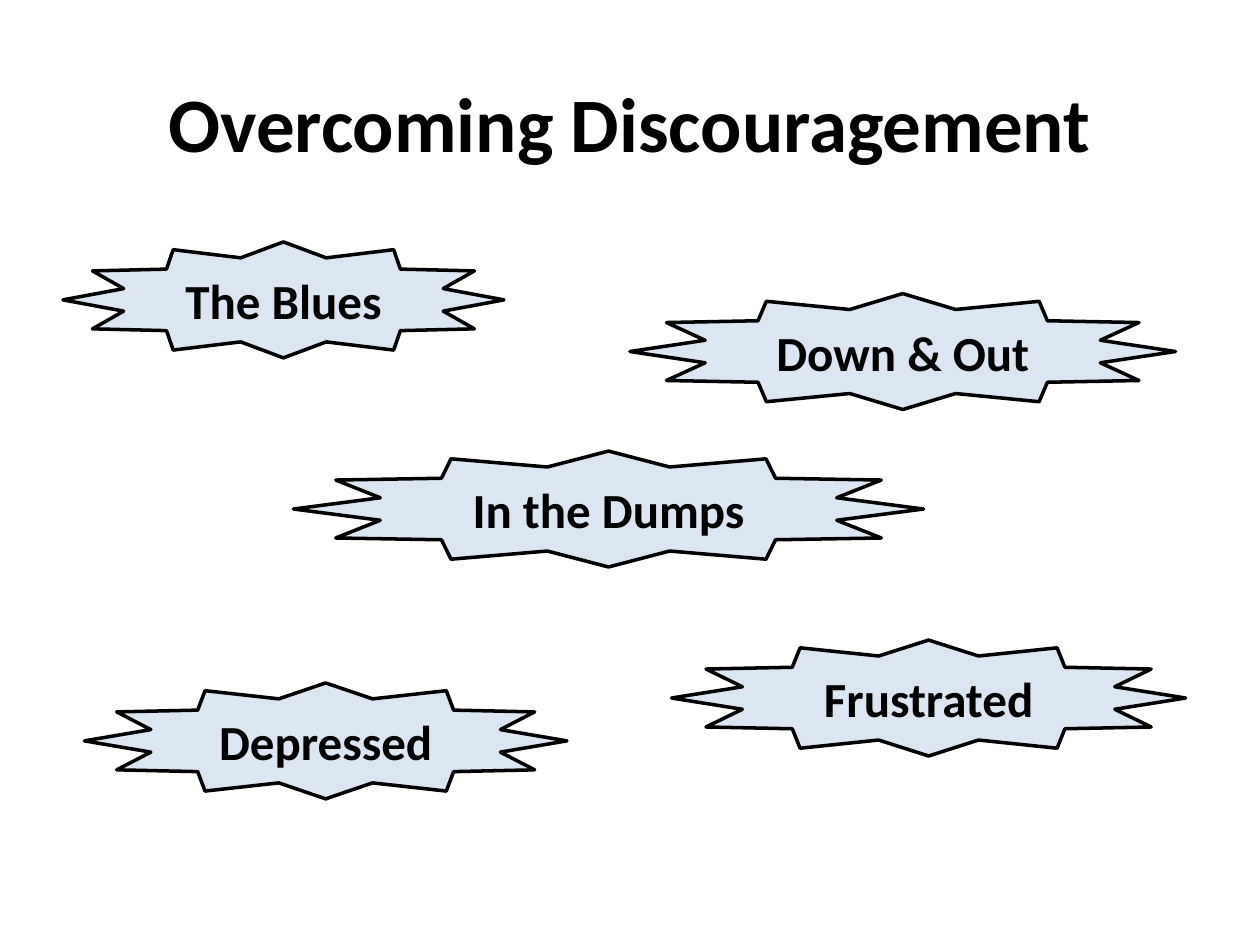
from dataclasses import dataclass

from pptx import Presentation
from pptx.dml.color import RGBColor
from pptx.enum.shapes import MSO_SHAPE
from pptx.enum.text import MSO_ANCHOR, PP_ALIGN
from pptx.util import Inches, Pt


@dataclass(frozen=True)
class Theme:
    font: str = "Calibri"
    ink: RGBColor = RGBColor(0x00, 0x00, 0x00)
    burst_fill: RGBColor = RGBColor(0xDC, 0xE6, 0xF2)
    title_size: int = 44
    burst_size: int = 28
    line_width: int = 2


class SlideBuilder:
    def __init__(self, slide, theme):
        self.s = slide
        self.theme = theme

    def set_label(self, sp, text, size, wrap):
        """Put one bold, centred line of text in a shape."""
        tf = sp.text_frame
        tf.text = text
        tf.word_wrap = wrap
        tf.vertical_anchor = MSO_ANCHOR.MIDDLE
        p = tf.paragraphs[0]
        p.alignment = PP_ALIGN.CENTER
        font = p.runs[0].font
        font.name = self.theme.font
        font.size = Pt(size)
        font.bold = True
        font.color.rgb = self.theme.ink

    def title(self, text, left, top, width, height):
        sp = self.s.shapes.add_textbox(
            Inches(left), Inches(top), Inches(width), Inches(height))
        self.set_label(sp, text, self.theme.title_size, wrap=True)

    def burst(self, text, left, top, width, height=0.92):
        sp = self.s.shapes.add_shape(
            MSO_SHAPE.STAR_12_POINT,
            Inches(left), Inches(top), Inches(width), Inches(height))
        sp.shadow.inherit = False
        sp.fill.solid()
        sp.fill.fore_color.rgb = self.theme.burst_fill
        sp.line.color.rgb = self.theme.ink
        sp.line.width = Pt(self.theme.line_width)
        self.set_label(sp, text, self.theme.burst_size, wrap=False)


FEELINGS = [  # text, left, top, width
    ("The Blues", 0.5, 1.92, 3.5),
    ("Down & Out", 5, 2.33, 4.33),
    ("In the Dumps", 2.33, 3.58, 5),
    ("Depressed", 0.67, 5.42, 3.83),
    ("Frustrated", 5.33, 5.08, 4.08),
]


def main():
    prs = Presentation()
    prs.slide_width, prs.slide_height = Inches(10), Inches(7.5)
    builder = SlideBuilder(prs.slides.add_slide(prs.slide_layouts[6]), Theme())
    builder.title("Overcoming Discouragement", 0.75, 0.42, 8.5, 1.09)
    for feeling in FEELINGS:
        builder.burst(*feeling)
    prs.save("out.pptx")


if __name__ == "__main__":
    main()
